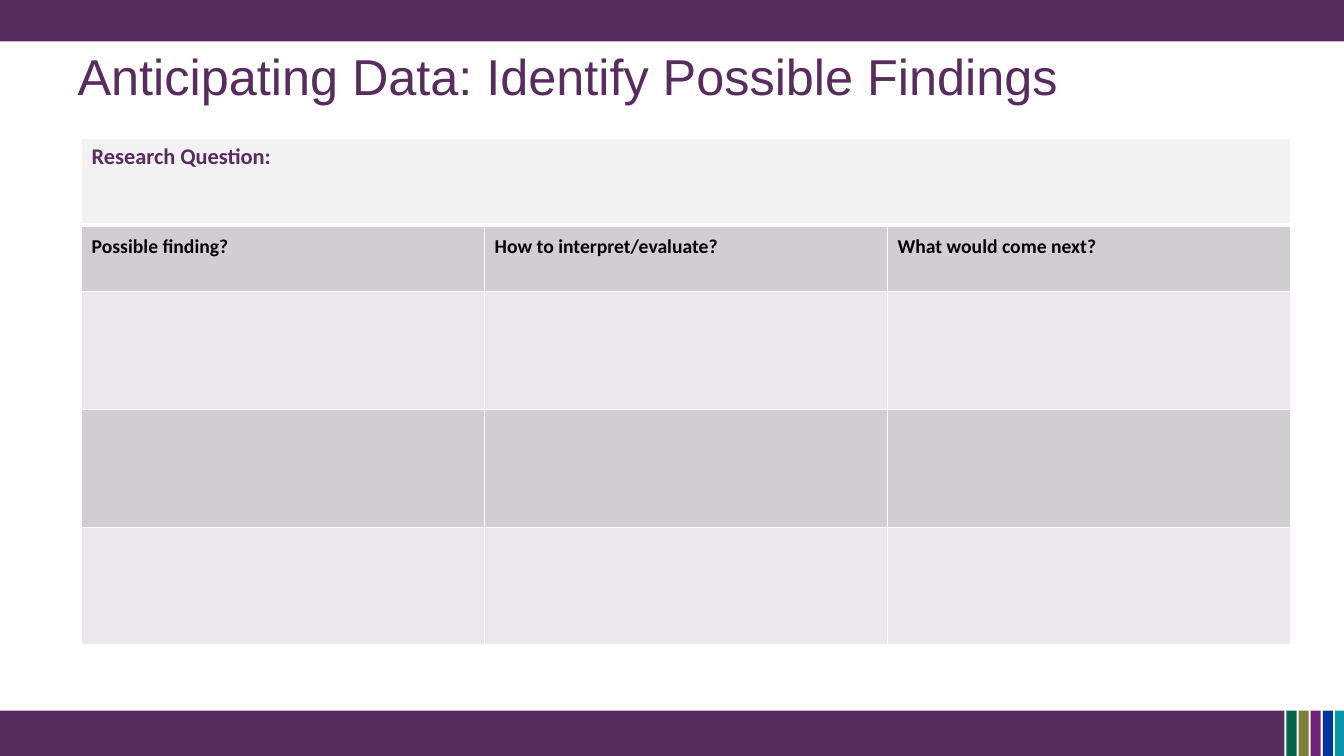
"""Build the "Anticipating Data" planning slide with its findings table."""
from dataclasses import dataclass

import lxml.etree
import pptx
import pptx.dml.color
import pptx.enum.shapes
import pptx.enum.text
import pptx.oxml.ns
import pptx.shapes.autoshape
import pptx.slide
import pptx.table
import pptx.text.text
import pptx.util

Inches = pptx.util.Inches


@dataclass(frozen=True)
class Theme:
    purple: str = "592C5F"
    black: str = "000000"
    white: str = "FFFFFF"
    question_fill: str = "F2F2F2"
    dark_row: str = "D1CDD2"
    light_row: str = "EAE8EA"
    title_font: str = "Arial"
    body_font: str = "Calibri"
    title_size: int = 36
    question_size: int = 16
    heading_size: int = 14


@dataclass(frozen=True)
class Band:
    left: float
    top: float
    width: float
    height: float
    color: str


THEME = Theme()
TITLE = "Anticipating Data: Identify Possible Findings"
QUESTION = "Research Question:"
HEADINGS = ["Possible finding?", "How to interpret/evaluate?", "What would come next?"]
ROW_HEIGHTS = [0.86, 0.66, 1.17, 1.17, 1.17]
TABLE_WIDTH = 11.99
STRIPES = ["006647", "7E8034", "712177", "0033A0", "0996A9"]
BANDS = [
    Band(0, 0, 13.33, 0.41, THEME.purple),
    Band(0, 7.05, 12.74, 0.45, THEME.purple),
    *(Band(12.76 + 0.12 * i, 7.05, 0.1, 0.45, color) for i, color in enumerate(STRIPES)),
]


def rgb(color: str) -> pptx.dml.color.RGBColor:
    return pptx.dml.color.RGBColor.from_string(color)


def add_run(p: pptx.text.text._Paragraph, text: str, font: str, size: int,
            color: str, bold: bool = False) -> None:
    r = p.add_run()
    r.text = text
    r.font.name = font
    r.font.size = pptx.util.Pt(size)
    r.font.bold = bold
    r.font.color.rgb = rgb(color)


def add_band(slide: pptx.slide.Slide, band: Band) -> None:
    sp = slide.shapes.add_shape(
        pptx.enum.shapes.MSO_SHAPE.RECTANGLE, Inches(band.left), Inches(band.top),
        Inches(band.width), Inches(band.height))
    sp.shadow.inherit = False
    sp.fill.solid()
    sp.fill.fore_color.rgb = rgb(band.color)
    sp.line.fill.background()


def style_title(sp: pptx.shapes.autoshape.Shape) -> None:
    sp.left, sp.top = Inches(0.67), Inches(0.12)
    sp.width, sp.height = Inches(12), Inches(1.25)
    tf = sp.text_frame
    tf.word_wrap = True
    tf.auto_size = pptx.enum.text.MSO_AUTO_SIZE.NONE
    tf.vertical_anchor = pptx.enum.text.MSO_ANCHOR.MIDDLE
    p = tf.paragraphs[0]
    p.alignment = pptx.enum.text.PP_ALIGN.LEFT
    add_run(p, TITLE, THEME.title_font, THEME.title_size, THEME.purple)


def style_cell(cell: pptx.table._Cell, color: str, top: int, bottom: int) -> None:
    qn = pptx.oxml.ns.qn
    tc_pr = cell._tc.get_or_add_tcPr()
    for side, points in (("L", 1), ("R", 1), ("T", top), ("B", bottom)):
        ln = lxml.etree.SubElement(tc_pr, qn(f"a:ln{side}"), w=str(pptx.util.Pt(points)))
        fill = lxml.etree.SubElement(ln, qn("a:solidFill"))
        lxml.etree.SubElement(fill, qn("a:srgbClr"), val=THEME.white)
    cell.fill.solid()
    cell.fill.fore_color.rgb = rgb(color)


def add_findings_table(slide: pptx.slide.Slide) -> None:
    columns = len(HEADINGS)
    table = slide.shapes.add_table(
        len(ROW_HEIGHTS), columns, Inches(0.81), Inches(1.37),
        Inches(TABLE_WIDTH), Inches(sum(ROW_HEIGHTS))).table
    table.horz_banding = False
    for column in table.columns:
        column.width = Inches(TABLE_WIDTH / columns)
    for i, height in enumerate(ROW_HEIGHTS):
        table.rows[i].height = Inches(height)
        row_fill = THEME.dark_row if i % 2 else THEME.light_row
        for cell in table.rows[i].cells:
            style_cell(cell, row_fill if i else THEME.question_fill,
                       top=3 if i == 1 else 1, bottom=1 if i else 3)
    question = table.cell(0, 0)
    question.merge(table.cell(0, columns - 1))
    add_run(question.text_frame.paragraphs[0], QUESTION, THEME.body_font,
            THEME.question_size, THEME.purple, bold=True)
    for j, heading in enumerate(HEADINGS):
        cell = table.cell(1, j)
        cell.margin_left = cell.margin_right = Inches(0.1)
        cell.margin_top = cell.margin_bottom = Inches(0.1)
        add_run(cell.text_frame.paragraphs[0], heading, THEME.body_font,
                THEME.heading_size, THEME.black, bold=True)


def main() -> None:
    prs = pptx.Presentation()
    prs.slide_width, prs.slide_height = Inches(13.33), Inches(7.5)
    slide = prs.slides.add_slide(prs.slide_layouts.get_by_name("Title Only"))
    style_title(slide.shapes.title)
    for band in BANDS:
        add_band(slide, band)
    add_findings_table(slide)
    prs.save("out.pptx")


if __name__ == "__main__":
    main()
